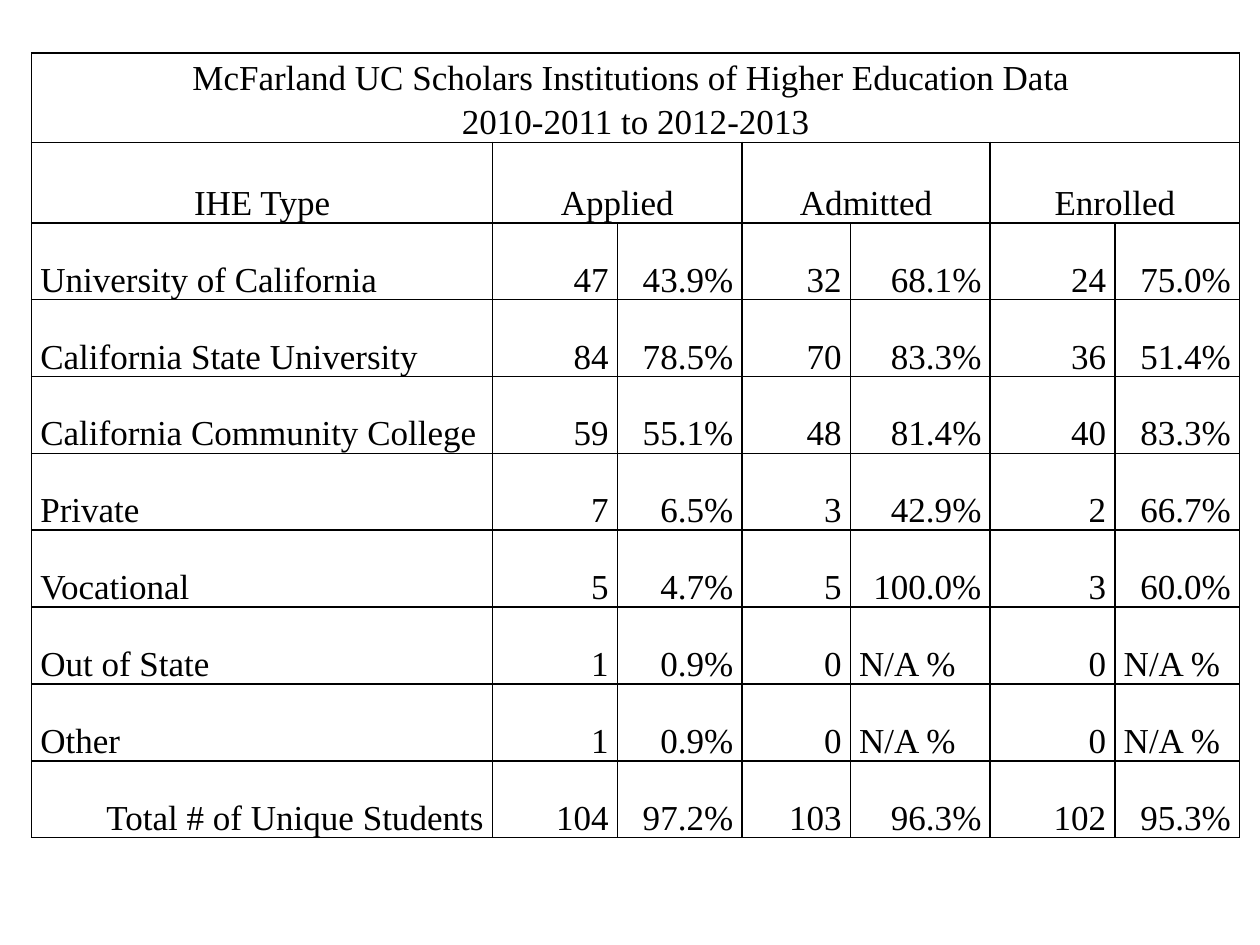
from lxml.etree import SubElement
from pptx import Presentation
from pptx.dml.color import RGBColor
from pptx.enum.text import MSO_ANCHOR, PP_ALIGN
from pptx.oxml.ns import qn
from pptx.util import Inches, Pt

BLACK = RGBColor(0, 0, 0)
FONT = "Times New Roman"
COL_WIDTHS = [3.66, 0.99, 0.99, 0.86, 1.11, 0.99, 0.99]
ROW_HEIGHT, HEADER_HEIGHT = 0.61, 0.64

TITLE = ["McFarland UC Scholars Institutions of Higher Education Data ",
         "2010-2011 to 2012-2013"]
STAGES = ["Applied", "Admitted", "Enrolled"]
TOTAL = "Total # of Unique Students"
NO_RATE = "N/A %"
ROWS = [
    ["University of California", "47", "43.9%", "32", "68.1%", "24", "75.0%"],
    ["California State University", "84", "78.5%", "70", "83.3%", "36", "51.4%"],
    ["California Community College", "59", "55.1%", "48", "81.4%", "40", "83.3%"],
    ["Private", "7", "6.5%", "3", "42.9%", "2", "66.7%"],
    ["Vocational", "5", "4.7%", "5", "100.0%", "3", "60.0%"],
    ["Out of State", "1", "0.9%", "0", NO_RATE, "0", NO_RATE],
    ["Other", "1", "0.9%", "0", NO_RATE, "0", NO_RATE],
    [TOTAL, "104", "97.2%", "103", "96.3%", "102", "95.3%"],
]


def write_text(tf, *lines, align=PP_ALIGN.LEFT, size=20, color=BLACK):
    for i, line in enumerate(lines):
        p = tf.add_paragraph() if i else tf.paragraphs[0]
        p.alignment = align
        p.line_spacing = 1.15
        r = p.add_run()
        r.text = line
        r.font.name = FONT
        r.font.size = Pt(size)
        r.font.color.rgb = color


def add_borders(cell, color=BLACK, width=1):
    """Draw all four edges; call before the fill, which must follow them in the XML."""
    tc_pr = cell._tc.get_or_add_tcPr()
    for edge in ("a:lnL", "a:lnR", "a:lnT", "a:lnB"):
        ln = SubElement(tc_pr, qn(edge), w=str(Pt(width)))
        fill = SubElement(ln, qn("a:solidFill"))
        SubElement(fill, qn("a:srgbClr"), val=str(color))


def style_cell(cell):
    add_borders(cell)
    cell.fill.background()
    cell.vertical_anchor = MSO_ANCHOR.BOTTOM
    cell.margin_left = cell.margin_right = Inches(0.07)
    cell.margin_top = cell.margin_bottom = 0


def add_grid(s):
    heights = [ROW_HEIGHT, HEADER_HEIGHT] + [ROW_HEIGHT] * len(ROWS)
    table = s.shapes.add_table(
        len(heights), len(COL_WIDTHS), Inches(0.25), Inches(0.42),
        Inches(sum(COL_WIDTHS)), Inches(sum(heights))).table
    table.first_row = table.horz_banding = False
    for column, width in zip(table.columns, COL_WIDTHS):
        column.width = Inches(width)
    for row, height in zip(table.rows, heights):
        row.height = Inches(height)
    for cell in table.iter_cells():
        style_cell(cell)
    return table


def fill_headings(table):
    center = PP_ALIGN.CENTER
    table.cell(0, 0).merge(table.cell(0, len(COL_WIDTHS) - 1))
    write_text(table.cell(0, 0).text_frame, *TITLE, align=center)
    write_text(table.cell(1, 0).text_frame, "IHE Type", align=center)
    for i, stage in enumerate(STAGES):
        col = 1 + 2 * i
        table.cell(1, col).merge(table.cell(1, col + 1))
        write_text(table.cell(1, col).text_frame, stage, align=center)


def fill_body(table):
    for i, row in enumerate(ROWS, start=2):
        for j, text in enumerate(row):
            is_left = text == NO_RATE or (j == 0 and text != TOTAL)
            write_text(table.cell(i, j).text_frame, text,
                       align=PP_ALIGN.LEFT if is_left else PP_ALIGN.RIGHT)


def main():
    prs = Presentation()
    prs.slide_width, prs.slide_height = Inches(10), Inches(7.5)
    s = prs.slides.add_slide(prs.slide_layouts[6])
    table = add_grid(s)
    fill_headings(table)
    fill_body(table)
    prs.save("out.pptx")


if __name__ == "__main__":
    main()
